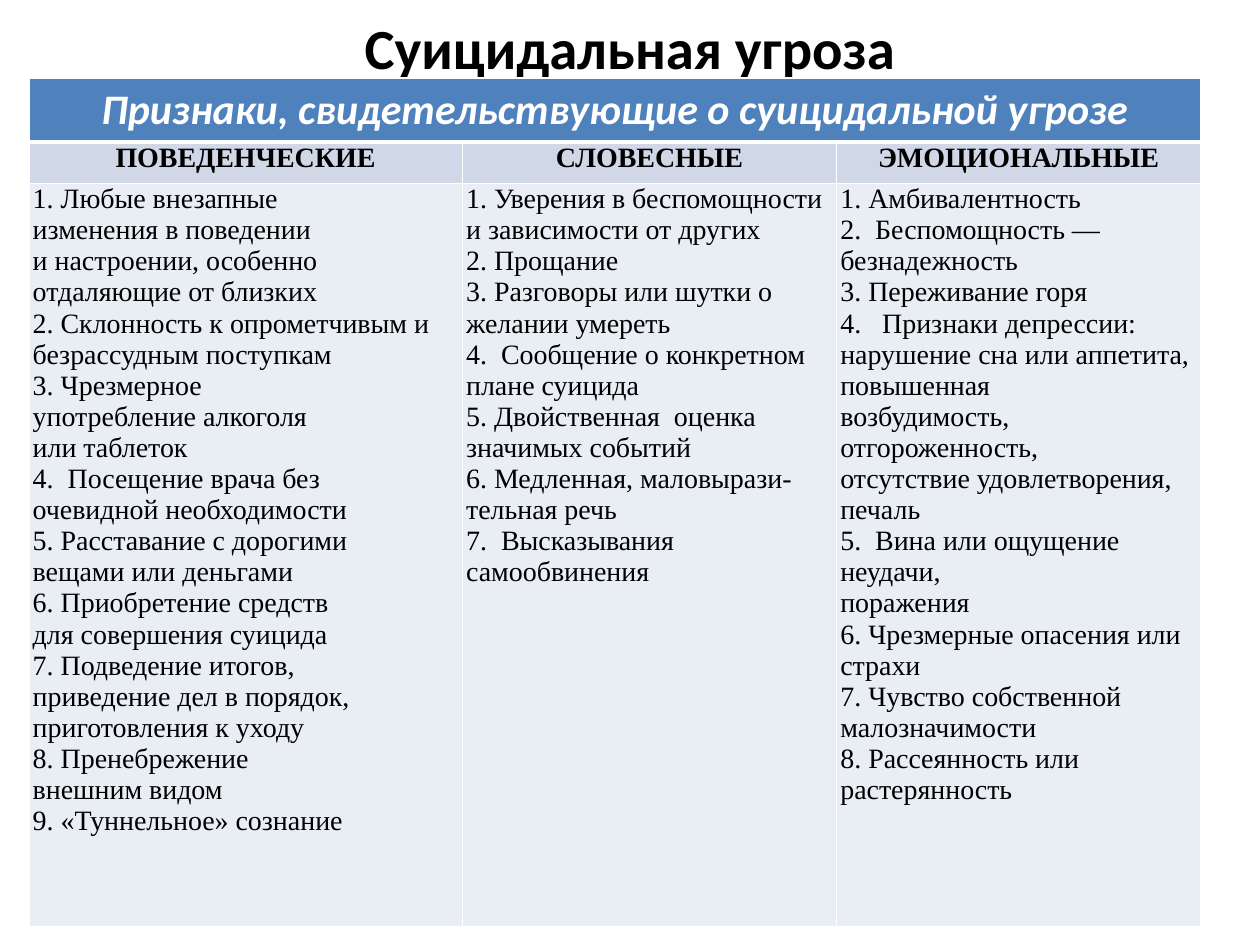
from dataclasses import dataclass

from lxml.etree import SubElement
from pptx import Presentation
from pptx.dml.color import RGBColor
from pptx.enum.text import MSO_ANCHOR, MSO_AUTO_SIZE, PP_ALIGN
from pptx.oxml.ns import qn
from pptx.util import Inches, Pt

TITLE = "Суицидальная угроза"
TABLE_HEADING = "Признаки, свидетельствующие о суицидальной угрозе"

TITLE_FONT = {"name": "Calibri", "size": Pt(32.4), "bold": True, "italic": False}
HEADING_FONT = {"name": "Calibri", "size": Pt(24), "bold": True, "italic": True}
CATEGORY_FONT = {"name": "Times New Roman", "size": Pt(16), "bold": True, "italic": False}
SIGNS_FONT = {**CATEGORY_FONT, "bold": False}
NARROW_MARGINS = {
    "margin_left": Inches(0.03),
    "margin_right": Inches(0.03),
    "margin_top": 0,
    "margin_bottom": 0,
}
ROW_HEIGHTS = (0.49, 0.33, 5.9)


@dataclass
class Category:
    name: str
    width: float
    signs: str


CATEGORIES = [
    Category("ПОВЕДЕНЧЕСКИЕ", 3.44, """1. Любые внезапные
изменения в поведении
и настроении, особенно
отдаляющие от близких
2. Склонность к опрометчивым и безрассудным поступкам
3. Чрезмерное
употребление алкоголя
или таблеток
4.  Посещение врача без
очевидной необходимости
5. Расставание с дорогими
вещами или деньгами
6. Приобретение средств
для совершения суицида
7. Подведение итогов,
приведение дел в порядок, приготовления к уходу
8. Пренебрежение
внешним видом
9. «Туннельное» сознание"""),
    Category("СЛОВЕСНЫЕ", 2.97, """1. Уверения в беспомощности
и зависимости от других
2. Прощание
3. Разговоры или шутки о желании умереть
4.  Сообщение о конкретном
плане суицида
5. Двойственная  оценка
значимых событий
6. Медленная, маловырази-
тельная речь
7.  Высказывания
самообвинения"""),
    Category("ЭМОЦИОНАЛЬНЫЕ", 2.89, """1. Амбивалентность
2.  Беспомощность —
безнадежность
3. Переживание горя
4.   Признаки депрессии: нарушение сна или аппетита, повышенная
возбудимость, отгороженность,
отсутствие удовлетворения, печаль
5.  Вина или ощущение неудачи,
поражения
6. Чрезмерные опасения или
страхи
7. Чувство собственной
малозначимости
8. Рассеянность или растерянность"""),
]


def color(value: str) -> RGBColor:
    return RGBColor.from_string(value)


def apply(target, values: dict) -> None:
    for attribute, value in values.items():
        setattr(target, attribute, value)


def write(frame, text: str, font: dict, ink: str, align: PP_ALIGN) -> None:
    frame.text = text
    for paragraph in frame.paragraphs:
        paragraph.alignment = align
        for run in paragraph.runs:
            apply(run.font, font)
            run.font.color.rgb = color(ink)


def add_borders(cell, top: float, bottom: float) -> None:
    properties = cell._tc.get_or_add_tcPr()
    for side, width in (("L", 1), ("R", 1), ("T", top), ("B", bottom)):
        line = SubElement(properties, qn(f"a:ln{side}"), w=str(Pt(width)))
        SubElement(SubElement(line, qn("a:solidFill")), qn("a:srgbClr"), val="FFFFFF")


def paint(cell, fill: str, top: float = 1, bottom: float = 1) -> None:
    add_borders(cell, top, bottom)
    cell.fill.solid()
    cell.fill.fore_color.rgb = color(fill)


def add_title(slide) -> None:
    title = slide.shapes.title
    apply(title, {"left": Inches(0.5), "top": Inches(0.18),
                  "width": Inches(9), "height": Inches(0.39)})
    write(title.text_frame, TITLE, TITLE_FONT, "000000", PP_ALIGN.CENTER)
    apply(title.text_frame, {"auto_size": MSO_AUTO_SIZE.NONE, "word_wrap": True,
                             "vertical_anchor": MSO_ANCHOR.MIDDLE})


def add_signs_table(slide) -> None:
    width = sum(category.width for category in CATEGORIES)
    table = slide.shapes.add_table(
        len(ROW_HEIGHTS), len(CATEGORIES), Inches(0.23), Inches(0.62),
        Inches(width), Inches(sum(ROW_HEIGHTS))).table
    apply(table, {"first_row": False, "horz_banding": False})
    for row, height in zip(table.rows, ROW_HEIGHTS):
        row.height = Inches(height)

    heading = table.cell(0, 0)
    heading.merge(table.cell(0, len(CATEGORIES) - 1))
    write(heading.text_frame, TABLE_HEADING, HEADING_FONT, "FFFFFF", PP_ALIGN.CENTER)

    for index, category in enumerate(CATEGORIES):
        table.columns[index].width = Inches(category.width)
        name, signs = table.cell(1, index), table.cell(2, index)
        for cell in (name, signs):
            apply(cell, NARROW_MARGINS)
        write(name.text_frame, category.name, CATEGORY_FONT, "000000", PP_ALIGN.CENTER)
        write(signs.text_frame, category.signs, SIGNS_FONT, "000000", PP_ALIGN.LEFT)
        paint(table.cell(0, index), "4F81BD", bottom=3)
        paint(name, "D0D8E8", top=3)
        paint(signs, "E9EDF4")


def main() -> None:
    presentation = Presentation()
    apply(presentation, {"slide_width": Inches(10), "slide_height": Inches(7.5)})
    slide = presentation.slides.add_slide(presentation.slide_layouts[5])
    add_title(slide)
    add_signs_table(slide)
    presentation.save("out.pptx")


if __name__ == "__main__":
    main()
